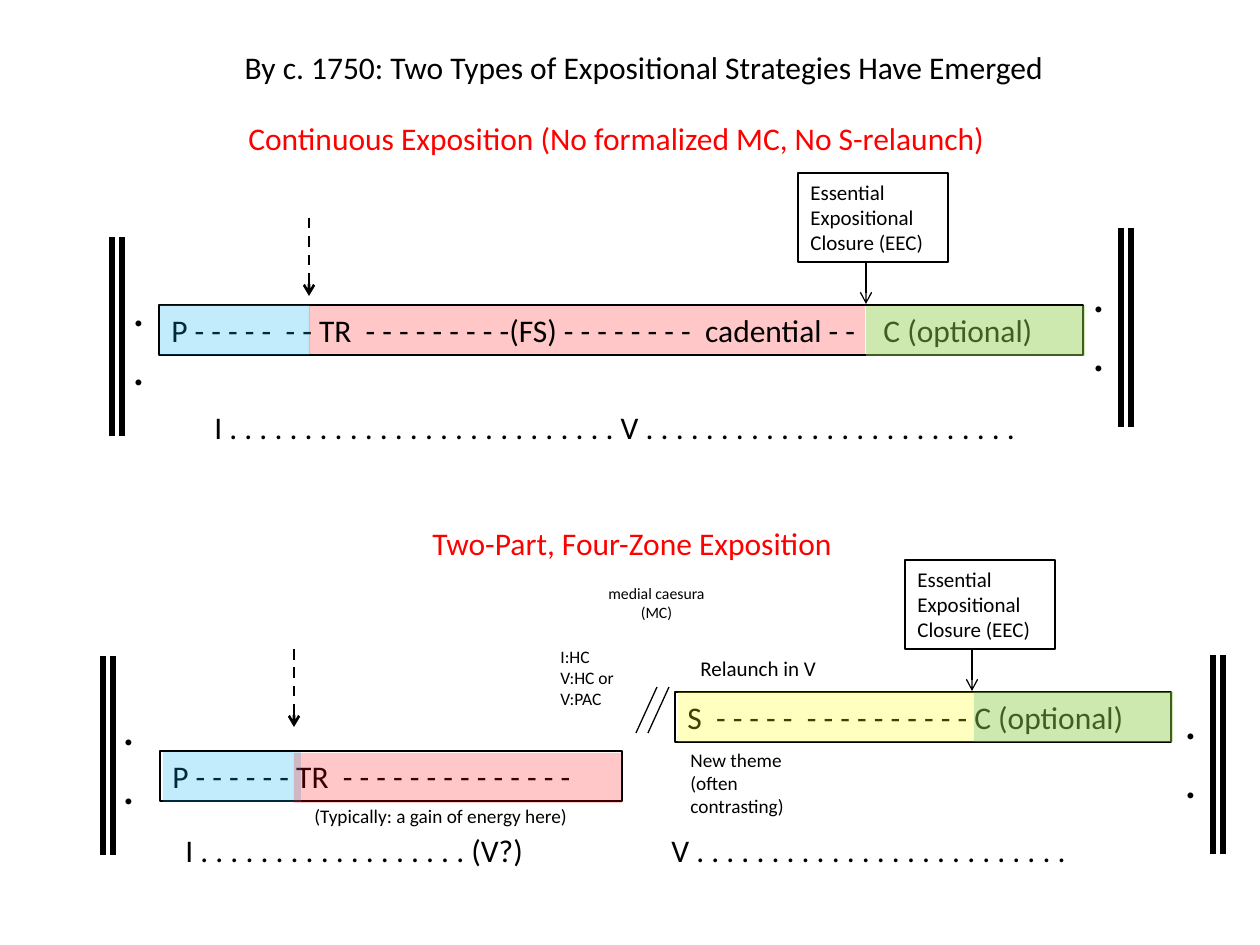
from dataclasses import dataclass

from pptx import Presentation
from pptx.dml.color import RGBColor
from pptx.enum.dml import MSO_LINE
from pptx.enum.shapes import MSO_CONNECTOR, MSO_SHAPE
from pptx.enum.text import MSO_ANCHOR, MSO_AUTO_SIZE, PP_ALIGN
from pptx.oxml.ns import qn
from pptx.util import Pt
from lxml.etree import SubElement

EMU_PER_PX = 914400 / 126


def px(length):
    return round(length * EMU_PER_PX)


@dataclass(frozen=True)
class Theme:
    font: str = "Calibri"
    ink: str = "000000"
    accent: str = "FF0000"
    primary: tuple = ("00B0F0", 24)
    transition: tuple = ("FF0000", 22)
    secondary: tuple = ("FFFF00", 25)
    closing: tuple = ("92D050", 45)
    dot: int = 28
    body: int = 18
    label: int = 12
    note: int = 11
    small: int = 10
    tiny: int = 9
    thin: float = 0.75
    medium: float = 1.5
    thick: float = 3


class Diagram:
    def __init__(self, page, theme):
        self.page = page
        self.theme = theme

    def fill_text(self, shape, lines, size, color=None, align=PP_ALIGN.LEFT, tab=None):
        frame = shape.text_frame
        frame_format = {
            "word_wrap": True,
            "auto_size": MSO_AUTO_SIZE.SHAPE_TO_FIT_TEXT,
            "vertical_anchor": MSO_ANCHOR.TOP,
            "margin_left": Pt(7.2), "margin_right": Pt(7.2),
            "margin_top": Pt(3.6), "margin_bottom": Pt(3.6),
        }
        for name, value in frame_format.items():
            setattr(frame, name, value)
        frame.text = "\n".join(lines)
        for para in frame.paragraphs:
            para.alignment = align
            if tab:
                stops = SubElement(para._p.get_or_add_pPr(), qn("a:tabLst"))
                SubElement(stops, qn("a:tab"), pos=str(px(tab)), algn="l")
            for span in para.runs:
                font_format = {"name": self.theme.font, "size": Pt(size), "bold": False}
                for name, value in font_format.items():
                    setattr(span.font, name, value)
                span.font.color.rgb = RGBColor.from_string(color or self.theme.ink)

    def title(self, area, line):
        box = self.page.shapes.title
        for name, value in zip(("left", "top", "width", "height"), area):
            setattr(box, name, px(value))
        self.fill_text(box, [line], self.theme.body)

    def text(self, area, lines, size, **style):
        self.fill_text(self.page.shapes.add_textbox(*map(px, area)), lines, size, **style)

    def rectangle(self, area):
        box = self.page.shapes.add_shape(MSO_SHAPE.RECTANGLE, *map(px, area))
        box.shadow.inherit = False
        return box

    def frame(self, area, lines, size, **style):
        box = self.rectangle(area)
        box.fill.background()
        box.line.color.rgb = RGBColor.from_string(self.theme.ink)
        box.line.width = Pt(self.theme.thin)
        self.fill_text(box, lines, size, **style)

    def zone(self, area, tint):
        color, opacity = tint
        box = self.rectangle(area)
        box.fill.solid()
        box.fill.fore_color.rgb = RGBColor.from_string(color)
        box.line.fill.background()
        fill = box._element.spPr.find(qn("a:solidFill"))
        SubElement(fill[0], qn("a:alpha"), val=str(opacity * 1000))

    def line(self, start, end, weight, dashed=False, arrow=False):
        stroke = self.page.shapes.add_connector(
            MSO_CONNECTOR.STRAIGHT, *map(px, start + end))
        stroke.line.color.rgb = RGBColor.from_string(self.theme.ink)
        stroke.line.width = Pt(weight)
        if dashed:
            stroke.line.dash_style = MSO_LINE.DASH
        if arrow:
            SubElement(stroke.line._get_or_add_ln(), qn("a:tailEnd"), type="arrow")
        SubElement(stroke._element.spPr, qn("a:effectLst"))

    def repeat_sign(self, x, y, dots_x, dots_y):
        for bar_x in (x, x + 10):
            self.line((bar_x, y), (bar_x, y + 199), self.theme.thick)
        self.text((dots_x, dots_y, 53, 131), [".", "."], self.theme.dot)

    def closure(self, x, y, arrow_x):
        self.frame((x, y, 150, 89), ["Essential", "Expositional Closure (EEC)"],
                   self.theme.label)
        self.line((arrow_x, y + 89), (arrow_x, y + 131), self.theme.thin, arrow=True)

    def transition_arrow(self, x, y):
        self.line((x, y), (x, y + 78), self.theme.medium, dashed=True, arrow=True)


def draw_continuous(diagram):
    theme = diagram.theme
    diagram.text((236, 113, 822, 50),
                 ["Continuous Exposition (No formalized MC, No S-relaunch)"],
                 theme.body, color=theme.accent)
    diagram.zone((309, 305, 556, 50), theme.transition)
    diagram.frame((159, 305, 924, 50),
                  ["P - - - - -  - - TR  - - - - - - - - -(FS) - - - - - - - -  "
                   "cadential - -\tC (optional)"], theme.body, tab=712)
    diagram.zone((866, 306, 219, 50), theme.closing)
    diagram.zone((160, 305, 150, 50), theme.primary)
    diagram.text((202, 402, 872, 50),
                 [f"I {'. ' * 26}V {'. ' * 25}".rstrip()], theme.body)
    diagram.repeat_sign(112, 237, 120, 271)
    diagram.repeat_sign(1121, 228, 1080, 257)
    diagram.transition_arrow(309, 218)
    diagram.closure(798, 173, 866)


def draw_two_part(diagram):
    theme = diagram.theme
    diagram.text((420, 518, 445, 50), ["Two-Part, Four-Zone Exposition"],
                 theme.body, color=theme.accent)
    diagram.frame((160, 751, 462, 50),
                  ["P - - - - - - TR  - - - - - - - - - - - - - -"], theme.body)
    diagram.frame((675, 692, 496, 50),
                  ["S  - - - - -  - - - - - - - - - - C (optional)"], theme.body)
    diagram.zone((974, 692, 199, 50), theme.closing)
    diagram.zone((163, 752, 138, 50), theme.primary)
    diagram.zone((678, 692, 296, 50), theme.secondary)
    diagram.zone((294, 753, 328, 50), theme.transition)
    diagram.closure(905, 560, 972)
    diagram.transition_arrow(294, 649)
    diagram.text((593, 578, 127, 50), ["medial caesura", "(MC)"], theme.tiny,
                 align=PP_ALIGN.CENTER)
    diagram.text((548, 640, 93, 77), ["I:HC", "V:HC or", "V:PAC"], theme.small)
    for slash_x in (636, 648):
        diagram.line((slash_x + 21, 687), (slash_x, 733), theme.thin)
    diagram.text((688, 649, 147, 38), ["Relaunch in V"], theme.label)
    diagram.text((678, 742, 137, 83), ["New theme", "(often contrasting)"], theme.note)
    diagram.text((302, 798, 282, 37), ["(Typically: a gain of energy here)"], theme.note)
    diagram.text((173, 825, 1003, 50),
                 [f"I {'. ' * 18}(V?)\tV {'. ' * 25}".rstrip()], theme.body, tab=486)
    diagram.repeat_sign(103, 656, 110, 690)
    diagram.repeat_sign(1213, 655, 1172, 684)


def main():
    deck = Presentation()
    deck.slide_width, deck.slide_height = px(1260), px(945)
    page = deck.slides.add_slide(deck.slide_layouts[5])
    diagram = Diagram(page, Theme())
    diagram.title((232, 42, 840, 53),
                  "By c. 1750: Two Types of Expositional Strategies Have Emerged")
    draw_continuous(diagram)
    draw_two_part(diagram)
    deck.save("out.pptx")


if __name__ == "__main__":
    main()
